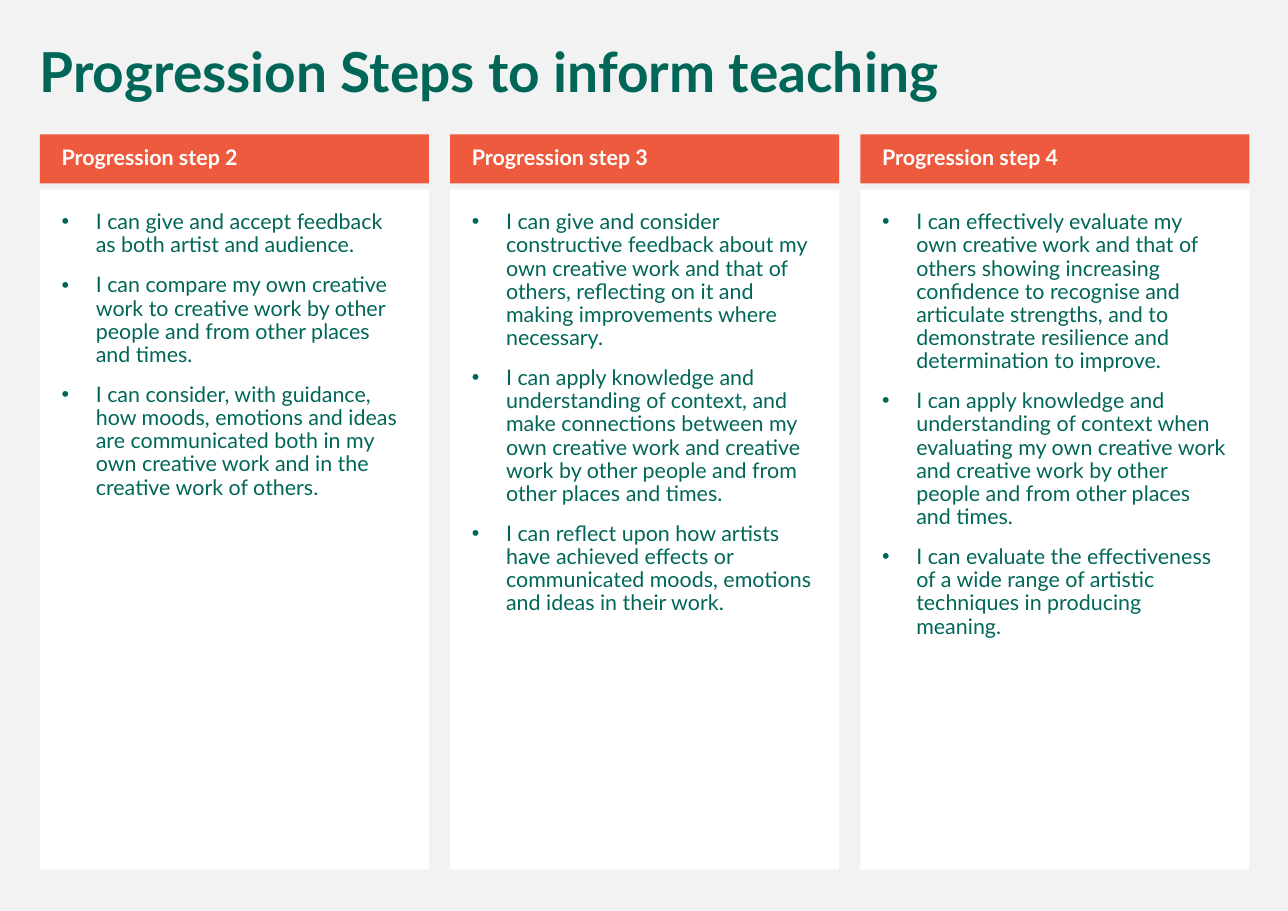
from lxml.etree import SubElement
from pptx import Presentation
from pptx.dml.color import RGBColor
from pptx.enum.shapes import MSO_SHAPE
from pptx.enum.text import MSO_ANCHOR, MSO_AUTO_SIZE, PP_ALIGN
from pptx.oxml.ns import qn
from pptx.util import Cm, Pt

FONT = "Lato"
GREEN, ORANGE, WHITE, GREY = "006758", "ED5A3E", "FFFFFF", "F2F2F2"
LEFT, PITCH, WIDTH = 0.92, 9.46, 8.97

STEPS = [
    ("Progression step 2", [
        "I can give and accept feedback as both artist and audience.",
        "I can compare my own creative work to creative work by other people "
        "and from other places and times.",
        "I can consider, with guidance, how moods, emotions and ideas are "
        "communicated both in my own creative work and in the creative work of others.",
    ]),
    ("Progression step 3", [
        "I can give and consider constructive feedback about my own creative work and "
        "that of others, reflecting on it and making improvements where necessary.",
        "I can apply knowledge and understanding of context, and make connections between "
        "my own creative work and creative work by other people and from other places "
        "and times.",
        "I can reflect upon how artists have achieved effects or communicated moods, "
        "emotions and ideas in their work.",
    ]),
    ("Progression step 4", [
        "I can effectively evaluate my own creative work and that of others showing "
        "increasing confidence to recognise and articulate strengths, and to demonstrate "
        "resilience and determination to improve.",
        "I can apply knowledge and understanding of context when evaluating my own creative "
        "work and creative work by other people and from other places and times.",
        "I can evaluate the effectiveness of a wide range of artistic techniques in "
        "producing meaning.",
    ]),
]


def rgb(color):
    """Return the colour for a hex string."""
    return RGBColor.from_string(color)


def add_bullet(p):
    """Give a paragraph a hanging bullet."""
    pPr = p._p.get_or_add_pPr()
    pPr.set("marL", str(Cm(0.79)))
    pPr.set("indent", str(-Cm(0.79)))
    SubElement(pPr, qn("a:buFont"), typeface="Arial")
    SubElement(pPr, qn("a:buChar"), char="•")


def write(tf, texts, size=14, color=GREEN, bold=False, bullet=False,
          anchor=MSO_ANCHOR.TOP, insets=(0.25, 0.13, 0.25, 0.13)):
    """Fill a text frame with one formatted paragraph per text."""
    tf.word_wrap = True
    tf.auto_size = MSO_AUTO_SIZE.NONE
    tf.vertical_anchor = anchor
    tf.margin_left, tf.margin_top, tf.margin_right, tf.margin_bottom = map(Cm, insets)
    for i, text in enumerate(texts):
        p = tf.add_paragraph() if i else tf.paragraphs[0]
        p.alignment = PP_ALIGN.LEFT
        p.line_spacing = 0.9
        p.space_before = Pt(11)
        if bullet:
            add_bullet(p)
        r = p.add_run()
        r.text = text
        r.font.name = FONT
        r.font.size = Pt(size)
        r.font.bold = bold
        r.font.color.rgb = rgb(color)


def add_panel(s, left, top, height, fill):
    """Add a plain filled rectangle one column wide and return its text frame."""
    sp = s.shapes.add_shape(MSO_SHAPE.RECTANGLE, Cm(left), Cm(top), Cm(WIDTH), Cm(height))
    sp.shadow.inherit = False
    sp.fill.solid()
    sp.fill.fore_color.rgb = rgb(fill)
    sp.line.fill.background()
    return sp.text_frame


def add_step(s, left, heading, statements):
    """Add one progression step: a heading bar above a list of statements."""
    write(add_panel(s, left, 4.37, 15.67, WHITE), statements, bullet=True,
          insets=(0.5, 0.5, 0.5, 0.5))
    write(add_panel(s, left, 3.1, 1.13, ORANGE), [heading], color=WHITE, bold=True,
          anchor=MSO_ANCHOR.MIDDLE, insets=(0.5, 0.13, 0.25, 0.13))


def add_title(s, text):
    """Place and format the slide title."""
    sp = s.shapes.title
    sp.left, sp.top, sp.width, sp.height = Cm(0.66), Cm(0.91), Cm(28.14), Cm(1.65)
    write(sp.text_frame, [text], size=36, bold=True)


def main():
    """Build and save the slide."""
    prs = Presentation()
    prs.slide_width, prs.slide_height = Cm(29.7), Cm(21)
    s = prs.slides.add_slide(prs.slide_layouts.get_by_name("Title Only"))
    s.background.fill.solid()
    s.background.fill.fore_color.rgb = rgb(GREY)
    add_title(s, "Progression Steps to inform teaching")
    for i, (heading, statements) in enumerate(STEPS):
        add_step(s, LEFT + i * PITCH, heading, statements)
    prs.save("out.pptx")


if __name__ == "__main__":
    main()
